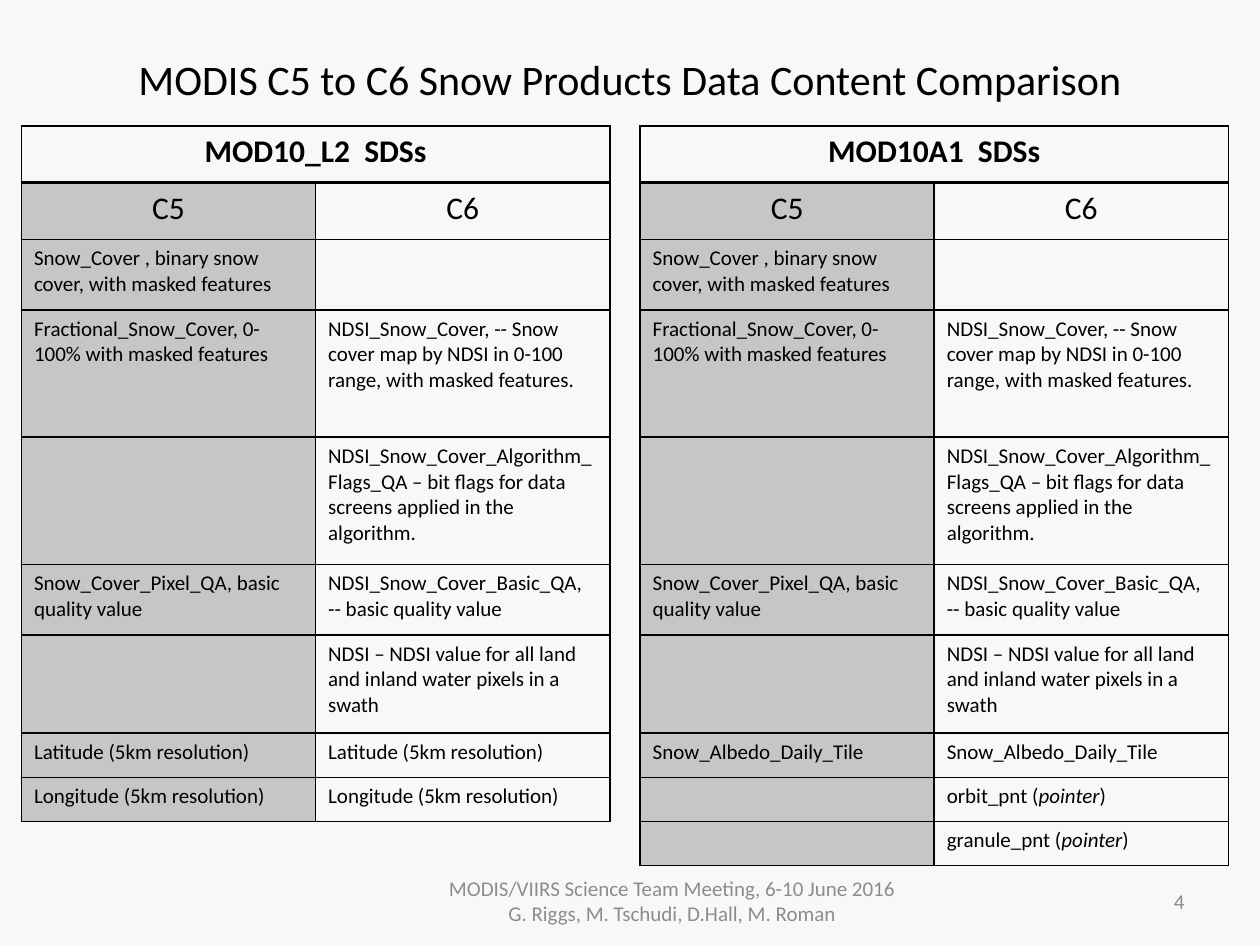
from lxml.etree import SubElement
from pptx import Presentation
from pptx.dml.color import RGBColor
from pptx.enum.text import MSO_ANCHOR, PP_ALIGN
from pptx.oxml.ns import qn
from pptx.util import Inches, Pt

BLACK, GREY, PAPER = "000000", "8C8C8C", "F8F8F8"
FONT = "Calibri"
BODY_SIZE, HEAD_SIZE = 12, 18

# Rows that both products share: (C5, C6, height)
SHARED_ROWS = [
    ("Snow_Cover , binary snow cover, with masked features", "", 0.56),
    ("Fractional_Snow_Cover, 0-100% with masked features",
     "NDSI_Snow_Cover, -- Snow cover map by NDSI in 0-100 range, with masked features.", 1.01),
    ("", "NDSI_Snow_Cover_Algorithm_Flags_QA – bit flags for data screens applied in the algorithm.",
     1.01),
    ("Snow_Cover_Pixel_QA, basic quality value",
     "NDSI_Snow_Cover_Basic_QA, -- basic quality value", 0.56),
    ("", "NDSI – NDSI value for all land and inland water pixels in a swath", 0.78),
]
# Closing rows of each product; asterisks enclose italic words
SWATH_ROWS = [(text, text, 0.35) for text in
              ("Latitude (5km resolution)", "Longitude (5km resolution)")]
TILE_ROWS = [
    ("Snow_Albedo_Daily_Tile", "Snow_Albedo_Daily_Tile", 0.35),
    ("", "orbit_pnt (*pointer*)", 0.35),
    ("", "granule_pnt (*pointer*)", 0.35),
]


def color(hex_code):
    return RGBColor.from_string(hex_code)


def write(frame, text, size, hex_code=BLACK, align=PP_ALIGN.LEFT, bold=False):
    """Write one paragraph, with the parts between asterisks in italics."""
    para = frame.paragraphs[0]
    para.alignment = align
    for index, part in enumerate(text.split("*") if text else []):
        span = para.add_run()
        span.text = part
        span.font.name = FONT
        span.font.size = Pt(size)
        span.font.bold = bold
        span.font.italic = index % 2 == 1
        span.font.color.rgb = color(hex_code)
    if not text:
        # Keeps empty cells from stretching their row
        SubElement(para._p, qn("a:endParaRPr"), sz=str(size * 100))


def set_borders(cell, top=1, bottom=1):
    properties = cell._tc.get_or_add_tcPr()
    for side, width in (("L", 1), ("R", 1), ("T", top), ("B", bottom)):
        line = SubElement(properties, qn(f"a:ln{side}"), w=str(Pt(width)))
        fill = SubElement(line, qn("a:solidFill"))
        SubElement(fill, qn("a:srgbClr"), val=BLACK)


def set_fill(cell, shaded):
    if not shaded:
        cell.fill.background()
        return
    cell.fill.solid()
    cell.fill.fore_color.rgb = color(BLACK)
    tint = cell._tc.tcPr.find(qn("a:solidFill")).find(qn("a:srgbClr"))
    SubElement(tint, qn("a:alpha"), val="20000")


def add_title(slide, text, left, top, width, height):
    title = slide.shapes.title
    title.left, title.top = Inches(left), Inches(top)
    title.width, title.height = Inches(width), Inches(height)
    title.text_frame.vertical_anchor = MSO_ANCHOR.MIDDLE
    write(title.text_frame, text, 24, align=PP_ALIGN.CENTER)


def add_comparison(slide, heading, body, left, top, width):
    rows = [(heading, "", 0.45), ("C5", "C6", 0.45)] + body
    height = sum(row[2] for row in rows)
    table = slide.shapes.add_table(len(rows), 2, Inches(left), Inches(top),
                                   Inches(width), Inches(height)).table
    table.first_row = table.horz_banding = False
    for column in table.columns:
        column.width = Inches(width / 2)
    for row_index, (*texts, row_height) in enumerate(rows):
        table.rows[row_index].height = Inches(row_height)
        is_head = row_index < 2
        for column_index, text in enumerate(texts):
            cell = table.cell(row_index, column_index)
            write(cell.text_frame, text, HEAD_SIZE if is_head else BODY_SIZE,
                  align=PP_ALIGN.CENTER if is_head else PP_ALIGN.LEFT,
                  bold=row_index == 0)
            # A heavier rule runs under the heading
            set_borders(cell, top=2 if row_index == 1 else 1,
                        bottom=2 if row_index == 0 else 1)
            set_fill(cell, shaded=row_index > 0 and column_index == 0)
    table.cell(0, 0).merge(table.cell(0, 1))


def add_footer_text(slide, text, align, left, top, width, height):
    box = slide.shapes.add_textbox(Inches(left), Inches(top), Inches(width), Inches(height))
    box.text_frame.word_wrap = True
    box.text_frame.vertical_anchor = MSO_ANCHOR.MIDDLE
    write(box.text_frame, text, 12, GREY, align)


def main():
    deck = Presentation()
    deck.slide_width, deck.slide_height = Inches(10), Inches(7.5)
    slide = deck.slides.add_slide(deck.slide_layouts[5])
    slide.background.fill.solid()
    slide.background.fill.fore_color.rgb = color(PAPER)

    add_title(slide, "MODIS C5 to C6 Snow Products Data Content Comparison", 0.5, 0, 9, 1.25)

    # Product tables
    add_comparison(slide, "MOD10_L2  SDSs", SHARED_ROWS + SWATH_ROWS, 0.17, 1, 4.67)
    add_comparison(slide, "MOD10A1  SDSs", SHARED_ROWS + TILE_ROWS, 5.08, 1, 4.67)

    # Footer and page number
    add_footer_text(slide, "MODIS/VIIRS Science Team Meeting, 6-10 June 2016 "
                    "G. Riggs, M. Tschudi, D.Hall, M. Roman",
                    PP_ALIGN.CENTER, 3.42, 6.95, 3.83, 0.4)
    add_footer_text(slide, "4", PP_ALIGN.RIGHT, 7.17, 6.95, 2.33, 0.4)

    deck.save("out.pptx")


if __name__ == "__main__":
    main()
